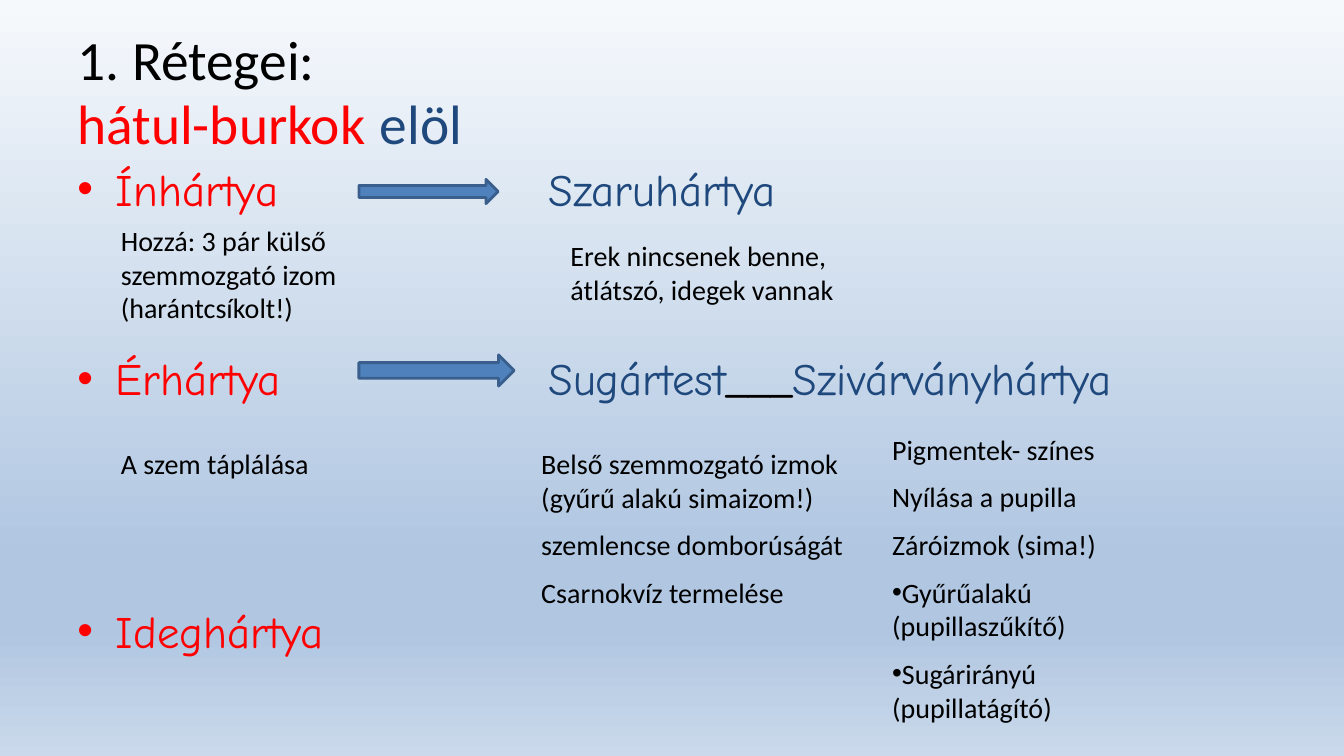
from lxml import etree
from pptx import Presentation
from pptx.dml.color import RGBColor
from pptx.enum.shapes import MSO_SHAPE
from pptx.enum.text import MSO_ANCHOR
from pptx.oxml.ns import qn
from pptx.util import Inches, Pt

RIGHT_ARROW = MSO_SHAPE.RIGHT_ARROW
TOP, MIDDLE = MSO_ANCHOR.TOP, MSO_ANCHOR.MIDDLE
COLORS = {"black": "000000", "back": "FF0000", "front": "1F497D",
          "arrow": "4F81BD", "arrow_edge": "3A5F8C"}
SKY = [(0, "F6F9FC"), (74, "B0C6E1"), (83, "B0C6E1"), (100, "CAD9EB")]


def add_text_box(place, anchor=TOP):
    box = page.shapes.add_textbox(*[Inches(value) for value in place])
    box.text_frame.word_wrap = True
    box.text_frame.vertical_anchor = anchor
    return box.text_frame


def write(frame, spans, size=20, font="Calibri", before=0, bullet=False,
          indent=0, tab=None, line_spacing=None):
    """Add a paragraph of (text, colour) spans; a newline span breaks the line."""
    para = frame.paragraphs[0]
    if para.runs:
        para = frame.add_paragraph()
    para.space_before = Pt(before)
    if line_spacing:
        para.line_spacing = line_spacing
    properties = para._p.get_or_add_pPr()
    properties.set("marL", str(Inches(indent)))
    properties.set("indent", str(-Inches(indent)))
    if bullet:
        etree.SubElement(properties, qn("a:buFont")).set("typeface", "Arial")
        etree.SubElement(properties, qn("a:buChar")).set("char", "•")
    if tab:
        tabs = etree.SubElement(properties, qn("a:tabLst"))
        etree.SubElement(tabs, qn("a:tab"), pos=str(Inches(tab)), algn="l")
    for text, color in spans:
        if text == "\n":
            para.add_line_break()
            continue
        span = para.add_run()
        span.text = text
        span.font.size = Pt(size)
        span.font.name = font
        span.font.color.rgb = RGBColor.from_string(COLORS[color])


deck = Presentation()
deck.slide_width, deck.slide_height = Inches(13.33), Inches(7.5)
page = deck.slides.add_slide(deck.slide_layouts[6])

# Background
sky = page.background.fill
sky.gradient()
sky.gradient_angle = 270
stops = page.background._cSld.find(".//" + qn("a:gsLst"))
for stop in list(stops):
    stops.remove(stop)
for percent, color in SKY:
    stop = etree.SubElement(stops, qn("a:gs"), pos=str(percent * 1000))
    etree.SubElement(stop, qn("a:srgbClr"), val=color)

# Title
title = add_text_box((0.67, 0.3, 12, 1.25), anchor=MIDDLE)
write(title, [("1. Rétegei:", "black"), ("\n", "black"),
              ("hátul-burkok\t", "back"), ("elöl", "front")],
      size=39.6, tab=5.61, line_spacing=0.96)

# Layers of the eye: back on the left, front on the right
layers = [
    (0, [("Ínhártya\t", "back"), ("Szaruhártya", "front")]),
    (97, [("Érhártya\t", "back"), ("Sugártest", "front"), ("___", "black"),
          ("Szivárványhártya", "front")]),
    (142, [("Ideghártya", "back")]),
]
body = add_text_box((0.67, 1.55, 12, 5.95))
for before, spans in layers:
    write(body, spans, size=32, font="Comic Neue", before=before,
          bullet=True, indent=0.38, tab=4.67)

# Notes under the layers: place, plain lines, bulleted lines
notes = [
    ((1.1, 2.17, 2.68, 1.11),
     ["Hozzá: 3 pár külső szemmozgató izom (harántcsíkolt!)"], []),
    ((5.56, 2.32, 3.15, 0.77),
     ["Erek nincsenek benne, átlátszó, idegek vannak"], []),
    ((1.1, 4.38, 2.13, 0.44), ["A szem táplálása"], []),
    ((5.27, 4.38, 3.23, 1.78),
     ["Belső szemmozgató izmok (gyűrű alakú simaizom!)",
      "szemlencse domborúságát", "Csarnokvíz termelése"], []),
    ((8.75, 4.24, 2.84, 3.1),
     ["Pigmentek- színes", "Nyílása a pupilla", "Záróizmok (sima!)"],
     ["Gyűrűalakú (pupillaszűkítő)", "Sugárirányú (pupillatágító)"]),
]
for place, plain, bulleted in notes:
    frame = add_text_box(place)
    for number, text in enumerate(plain + bulleted):
        write(frame, [(text, "black")], before=10 if number else 0,
              bullet=text in bulleted)

# Arrows from back to front
for top, width, height in [(1.78, 1.38, 0.24), (3.52, 1.54, 0.31)]:
    arrow = page.shapes.add_shape(RIGHT_ARROW, Inches(3.56), Inches(top),
                                  Inches(width), Inches(height))
    arrow.shadow.inherit = False
    arrow.fill.solid()
    arrow.fill.fore_color.rgb = RGBColor.from_string(COLORS["arrow"])
    arrow.line.color.rgb = RGBColor.from_string(COLORS["arrow_edge"])
    arrow.line.width = Pt(2)

deck.save("out.pptx")
